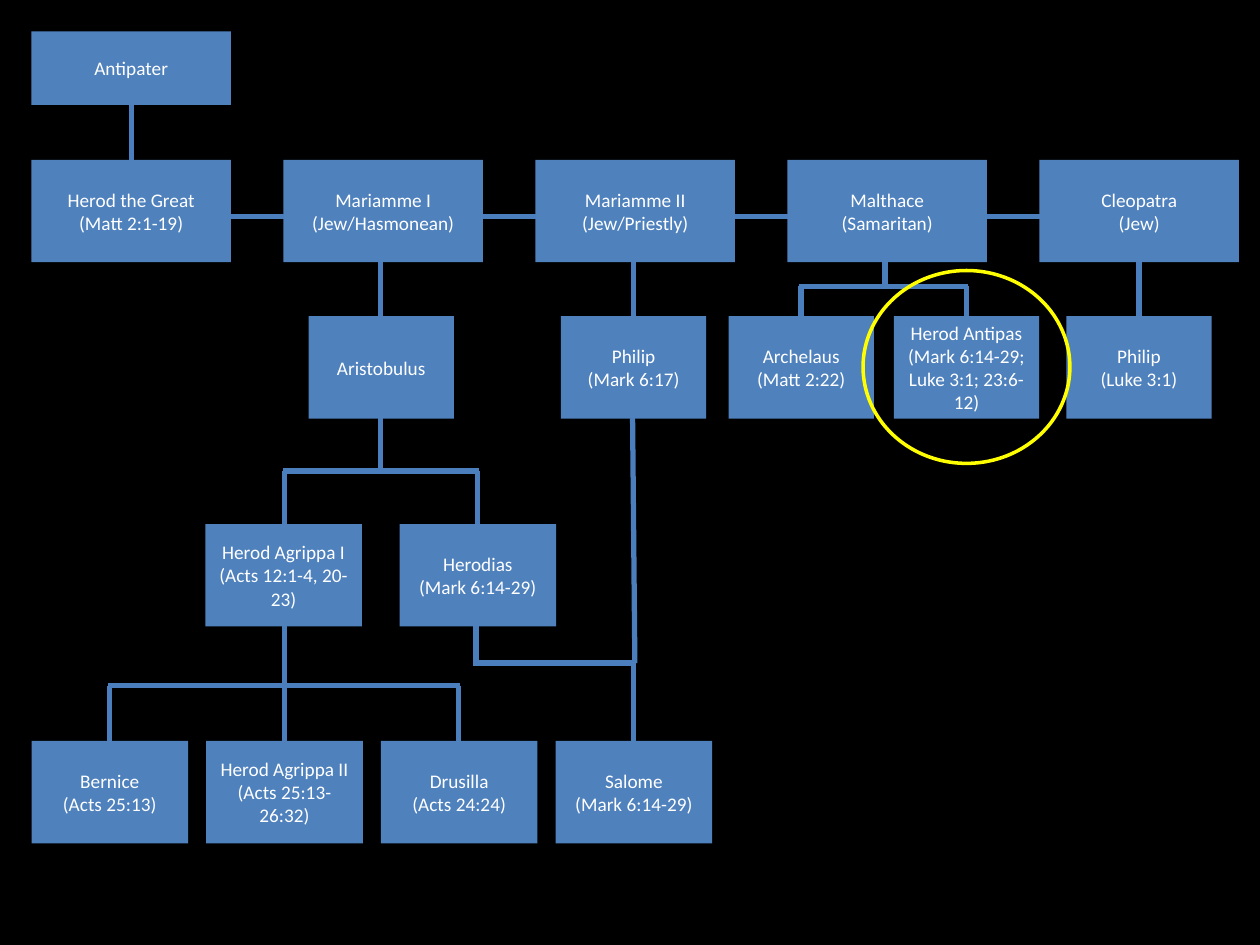
"""Build a family tree slide of the Herodian dynasty."""
from lxml import etree
from pptx import Presentation
from pptx.dml.color import RGBColor
from pptx.enum import shapes, text
from pptx.oxml import ns
from pptx.util import Pt

BLACK = RGBColor(0x00, 0x00, 0x00)
WHITE = RGBColor(0xFF, 0xFF, 0xFF)
BOX_BLUE = RGBColor(0x4F, 0x81, 0xBD)
LINE_BLUE = RGBColor(0x4B, 0x7E, 0xBC)
YELLOW = RGBColor(0xFF, 0xFF, 0x00)

MARGIN = 18
BOX_HEIGHT = 58.5
SPOUSE_WIDTH, SPOUSE_PITCH, SPOUSE_TOP = 114, 144, 91.4
CHILD_WIDTH, CHILD_TOP = 83, 180.7
HEIR_WIDTH, GRANDCHILD_TOP = 89.5, 299.5
HEIR_PITCH, GREAT_GRANDCHILD_TOP = 99.84, 423.4

SPOUSES = [
    "Herod the Great\n(Matt 2:1-19)",
    "Mariamme I\n(Jew/Hasmonean)",
    "Mariamme II\n(Jew/Priestly)",
    "Malthace\n(Samaritan)",
    "Cleopatra\n(Jew)",
]
CHILDREN = [
    (176.4, "Aristobulus"),
    (320.6, "Philip\n(Mark 6:17)"),
    (416.4, "Archelaus\n(Matt 2:22)"),
    (510.8, "Herod Antipas\n(Mark 6:14-29; Luke 3:1; 23:6-12)"),
    (609.4, "Philip\n(Luke 3:1)"),
]
GRANDCHILDREN = [
    (117.3, "Herod Agrippa I\n(Acts 12:1-4, 20-23)"),
    (228.3, "Herodias\n(Mark 6:14-29)"),
]
GREAT_GRANDCHILDREN = [
    "Bernice\n(Acts 25:13)",
    "Herod Agrippa II\n(Acts 25:13-26:32)",
    "Drusilla\n(Acts 24:24)",
    "Salome\n(Mark 6:14-29)",
]
DESCENTS = [
    (75, 60, SPOUSE_TOP),
    (217.5, 148.5, CHILD_TOP),
    (362, 149.9, CHILD_TOP),
    (650.9, 149, CHILD_TOP),
]
BRANCHES = [
    (505.8, 149, 163.6, [457.7, 552.4], CHILD_TOP),
    (217.5, 238.5, 269.2, [162.6, 273], GRANDCHILD_TOP),
    (162.6, 358, 391.8, [62.6, 162.6, 262.1], GREAT_GRANDCHILD_TOP),
]
SALOME_PARENT_LINES = [
    (361.5, 239, 362.8, 378.9),
    (272, 358, 272, 380.4),
    (272, 378.9, 363.4, 378.9),
    (362.2, 378.9, 362.2, GREAT_GRANDCHILD_TOP),
]


def add_line(slide, start_x, start_y, end_x, end_y):
    """Draw one straight family line."""
    line = slide.shapes.add_connector(
        shapes.MSO_CONNECTOR.STRAIGHT, Pt(start_x), Pt(start_y), Pt(end_x), Pt(end_y))
    line.line.color.rgb = LINE_BLUE
    line.line.width = Pt(3)
    etree.SubElement(line._element.spPr, ns.qn("a:effectLst"))


def add_branch(slide, parent_x, top, bar_y, child_xs, bottom):
    """Draw a stem, a crossbar and one drop for each child."""
    add_line(slide, parent_x, top, parent_x, bar_y)
    add_line(slide, child_xs[0] - 1, bar_y, child_xs[-1] + 1, bar_y)
    for child_x in child_xs:
        add_line(slide, child_x, bar_y, child_x, bottom)


def add_person(slide, left, top, width, label, height=BOX_HEIGHT):
    """Draw a box with a name and its reference."""
    shape = slide.shapes.add_shape(
        shapes.MSO_SHAPE.RECTANGLE, Pt(left), Pt(top), Pt(width), Pt(height))
    shape.shadow.inherit = False
    shape.fill.solid()
    shape.fill.fore_color.rgb = BOX_BLUE
    shape.line.fill.background()
    text_frame = shape.text_frame
    text_frame.word_wrap = True
    text_frame.vertical_anchor = text.MSO_ANCHOR.MIDDLE
    text_frame.text = label
    for paragraph in text_frame.paragraphs:
        paragraph.alignment = text.PP_ALIGN.CENTER
        for run in paragraph.runs:
            run.font.name = "Calibri"
            run.font.size = Pt(11)
            run.font.color.rgb = WHITE


def add_highlight(slide, left, top, width, height):
    """Draw a yellow ring around a person."""
    ring = slide.shapes.add_shape(
        shapes.MSO_SHAPE.OVAL, Pt(left), Pt(top), Pt(width), Pt(height))
    ring.shadow.inherit = False
    ring.fill.background()
    ring.line.color.rgb = YELLOW
    ring.line.width = Pt(2)


def add_family_lines(slide):
    """Draw all marriages and descents."""
    for index in range(1, len(SPOUSES)):
        right = MARGIN + index * SPOUSE_PITCH
        add_line(slide, right - SPOUSE_PITCH + SPOUSE_WIDTH, 123.8, right, 123.8)
    for x, top, bottom in DESCENTS:
        add_line(slide, x, top, x, bottom)
    for branch in BRANCHES:
        add_branch(slide, *branch)
    for points in SALOME_PARENT_LINES:
        add_line(slide, *points)


def add_people(slide):
    """Draw every generation."""
    add_person(slide, MARGIN, MARGIN, SPOUSE_WIDTH, "Antipater", height=42)
    for index, label in enumerate(SPOUSES):
        add_person(slide, MARGIN + index * SPOUSE_PITCH, SPOUSE_TOP, SPOUSE_WIDTH, label)
    for left, label in CHILDREN:
        add_person(slide, left, CHILD_TOP, CHILD_WIDTH, label)
    for left, label in GRANDCHILDREN:
        add_person(slide, left, GRANDCHILD_TOP, HEIR_WIDTH, label)
    for index, label in enumerate(GREAT_GRANDCHILDREN):
        add_person(slide, MARGIN + index * HEIR_PITCH, GREAT_GRANDCHILD_TOP, HEIR_WIDTH, label)


def main():
    """Create and save the slide."""
    presentation = Presentation()
    presentation.slide_width = Pt(720)
    presentation.slide_height = Pt(540)
    slide = presentation.slides.add_slide(presentation.slide_layouts[6])
    slide.background.fill.solid()
    slide.background.fill.fore_color.rgb = BLACK
    add_family_lines(slide)
    add_people(slide)
    add_highlight(slide, 493.2, 154.6, 118.2, 110.2)
    presentation.save("out.pptx")


if __name__ == "__main__":
    main()
